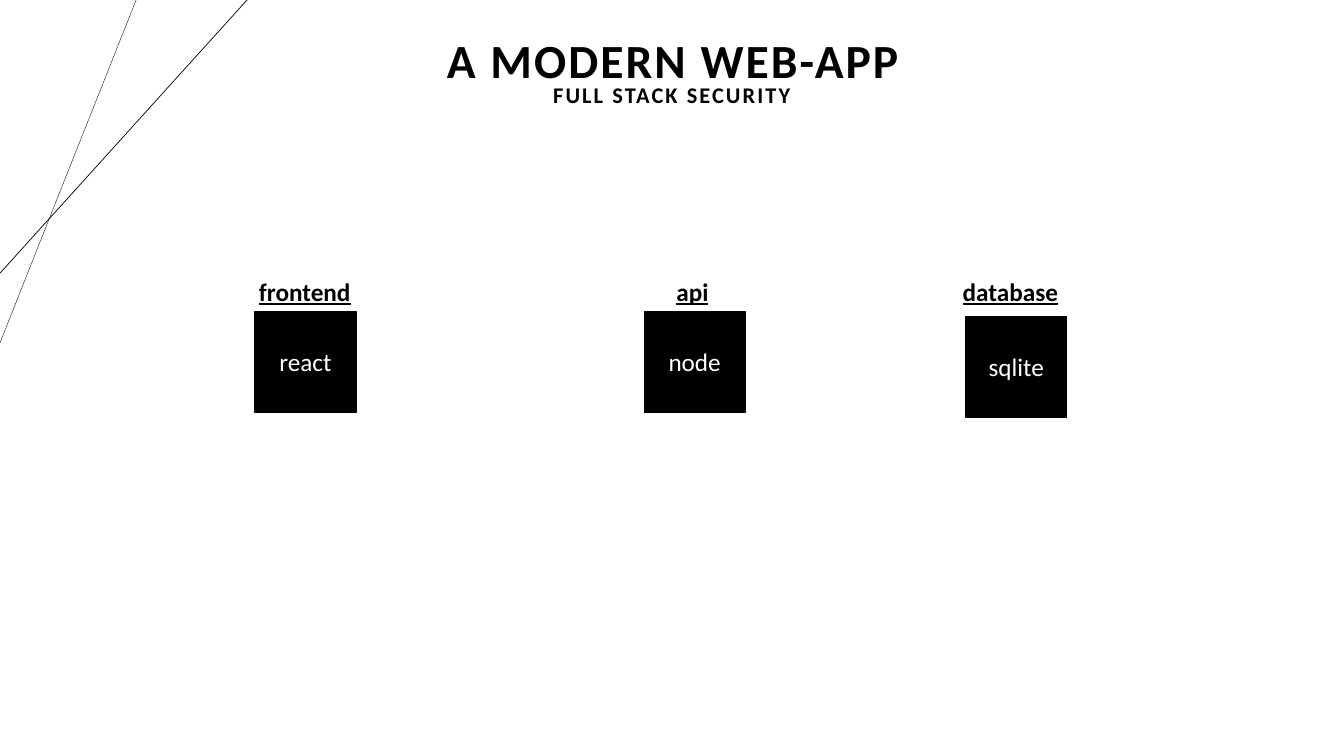
from dataclasses import dataclass

from lxml import etree
from pptx import Presentation
from pptx.dml.color import RGBColor
from pptx.enum.shapes import MSO_CONNECTOR, MSO_SHAPE
from pptx.enum.text import MSO_ANCHOR, MSO_AUTO_SIZE, PP_ALIGN
from pptx.oxml.ns import qn
from pptx.util import Inches, Pt

STRAIGHT = MSO_CONNECTOR.STRAIGHT
RECTANGLE = MSO_SHAPE.RECTANGLE
MIDDLE, TOP = MSO_ANCHOR.MIDDLE, MSO_ANCHOR.TOP
NO_FIT, GROW = MSO_AUTO_SIZE.NONE, MSO_AUTO_SIZE.SHAPE_TO_FIT_TEXT
CENTER, LEFT = PP_ALIGN.CENTER, PP_ALIGN.LEFT
TITLE_ONLY = 5


@dataclass(frozen=True)
class Theme:
    font: str = "Calibri"
    ink: RGBColor = RGBColor(0, 0, 0)
    paper: RGBColor = RGBColor(255, 255, 255)
    title_size: float = 34
    subtitle_size: float = 16
    body_size: float = 18
    heading_tracking: float = 1.5
    heading_line_spacing: float = 0.9
    box_line: float = 1


@dataclass(frozen=True)
class CornerLine:
    start_x: float
    end_y: float
    weight: float


@dataclass(frozen=True)
class Tier:
    label: str
    label_left: float
    label_width: float
    technology: str
    box_left: float
    box_top: float


THEME = Theme()
HEADING_WIDTH, HEADING_HEIGHT = 13.31, 1.45
LABEL_TOP, LABEL_HEIGHT = 2.69, 0.4
BOX_SIDE = 1

CORNER_LINES = [CornerLine(1.35, 3.4, 0.25), CornerLine(2.45, 2.71, 0.5)]
TIERS = [
    Tier("frontend", 2.47, 1.13, "react", 2.53, 3.09),
    Tier("api", 6.61, 0.56, "node", 6.39, 3.09),
    Tier("database", 9.45, 1.26, "sqlite", 9.58, 3.14),
]


def place(shape, left: float, top: float, width: float, height: float) -> None:
    shape.left, shape.top = Inches(left), Inches(top)
    shape.width, shape.height = Inches(width), Inches(height)


def write(shape, text: str, size: float, color: RGBColor, alignment, anchor,
          bold: bool = False, underline: bool = False):
    frame = shape.text_frame
    frame.vertical_anchor = anchor
    paragraph = frame.paragraphs[0]
    paragraph.alignment = alignment
    run = paragraph.add_run()
    run.text = text
    run.font.name = THEME.font
    run.font.size = Pt(size)
    run.font.color.rgb = color
    run.font.bold = bold
    run.font.underline = underline
    return paragraph, run


def add_corner_line(slide, line: CornerLine) -> None:
    connector = slide.shapes.add_connector(
        STRAIGHT, Inches(line.start_x), 0, 0, Inches(line.end_y))
    connector.line.color.rgb = THEME.ink
    connector.line.width = Pt(line.weight)
    etree.SubElement(connector._element.spPr, qn("a:effectLst"))


def format_heading(shape, text: str, size: float, left: float, top: float) -> None:
    place(shape, left, top, HEADING_WIDTH, HEADING_HEIGHT)
    shape.text_frame.word_wrap = True
    shape.text_frame.auto_size = NO_FIT
    paragraph, run = write(shape, text, size, THEME.ink, CENTER, MIDDLE, bold=True)
    paragraph.line_spacing = THEME.heading_line_spacing
    run._r.get_or_add_rPr().set("spc", str(int(THEME.heading_tracking * 100)))


def add_label(slide, tier: Tier) -> None:
    label = slide.shapes.add_textbox(
        Inches(tier.label_left), Inches(LABEL_TOP),
        Inches(tier.label_width), Inches(LABEL_HEIGHT))
    label.text_frame.word_wrap = False
    label.text_frame.auto_size = GROW
    write(label, tier.label, THEME.body_size, THEME.ink, LEFT, TOP,
          bold=True, underline=True)


def add_box(slide, tier: Tier) -> None:
    box = slide.shapes.add_shape(
        RECTANGLE, Inches(tier.box_left), Inches(tier.box_top),
        Inches(BOX_SIDE), Inches(BOX_SIDE))
    box.shadow.inherit = False
    box.fill.solid()
    box.fill.fore_color.rgb = THEME.ink
    box.line.color.rgb = THEME.ink
    box.line.width = Pt(THEME.box_line)
    write(box, tier.technology, THEME.body_size, THEME.paper, CENTER, MIDDLE)


def main() -> None:
    presentation = Presentation()
    presentation.slide_width = Inches(13.33)
    presentation.slide_height = Inches(7.5)
    slide = presentation.slides.add_slide(presentation.slide_layouts[TITLE_ONLY])
    slide.background.fill.solid()
    slide.background.fill.fore_color.rgb = THEME.paper

    for line in CORNER_LINES:
        add_corner_line(slide, line)
    format_heading(slide.shapes.title, "A MODERN WEB-APP", THEME.title_size, 0.02, -0.1)
    subtitle = slide.shapes.add_textbox(0, 0, 0, 0)
    format_heading(subtitle, "FULL STACK SECURITY", THEME.subtitle_size, 0.01, 0.23)
    for tier in TIERS:
        add_label(slide, tier)
        add_box(slide, tier)

    presentation.save("out.pptx")


if __name__ == "__main__":
    main()
